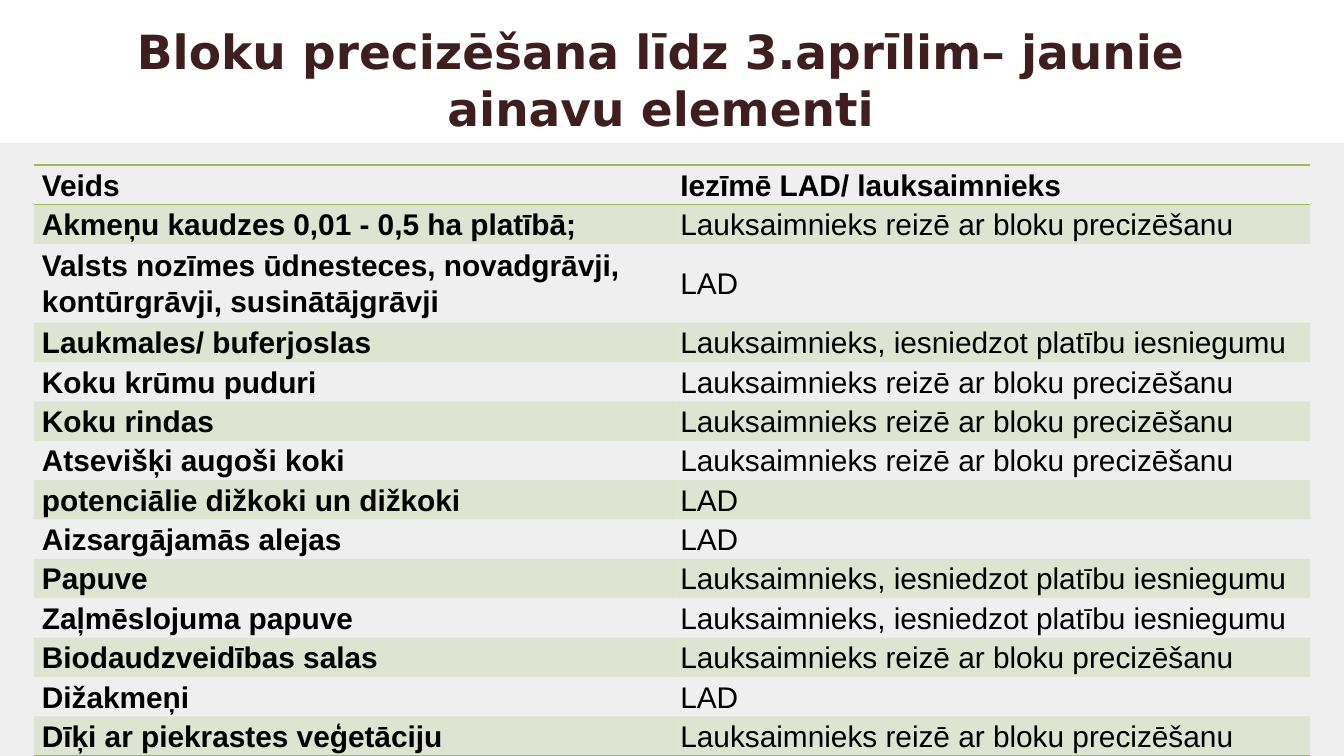
from lxml import etree
from pptx import Presentation
from pptx import util as u
from pptx.dml.color import RGBColor
from pptx.enum import shapes, text
from pptx.oxml.ns import qn

COLOURS = {"title": "3E1E1F", "panel": "A6A6A6", "green": "9BBB59", "ink": "000000"}
NO_GRID_STYLE = "{2D5ABB26-0587-4C30-8999-92F81FD0307C}"

# Who marks each element
FARMER_BLOCKS = "Lauksaimnieks reizē ar bloku precizēšanu"
FARMER_APPLICATION = "Lauksaimnieks, iesniedzot platību iesniegumu"
AGENCY = "LAD"
ELEMENTS = [
    ("Veids", "Iezīmē LAD/ lauksaimnieks"),
    ("Akmeņu kaudzes 0,01 - 0,5 ha platībā;", FARMER_BLOCKS),
    ("Valsts nozīmes ūdnesteces, novadgrāvji, kontūrgrāvji, susinātājgrāvji", AGENCY),
    ("Laukmales/ buferjoslas", FARMER_APPLICATION),
    ("Koku krūmu puduri", FARMER_BLOCKS),
    ("Koku rindas", FARMER_BLOCKS),
    ("Atsevišķi augoši koki", FARMER_BLOCKS),
    ("potenciālie dižkoki un dižkoki", AGENCY),
    ("Aizsargājamās alejas", AGENCY),
    ("Papuve", FARMER_APPLICATION),
    ("Zaļmēslojuma papuve", FARMER_APPLICATION),
    ("Biodaudzveidības salas", FARMER_BLOCKS),
    ("Dižakmeņi", AGENCY),
    ("Dīķi ar piekrastes veģetāciju", FARMER_BLOCKS),
]
TALL_ROW = 2
ROW_HEIGHT = 21.1


class PageBuilder:
    def __init__(self, page):
        self.page = page

    def colour(self, name):
        return RGBColor.from_string(COLOURS[name])

    def add_span(self, para, words, font, size, colour, bold):
        span = para.add_run()
        span.text = words
        span.font.name = font
        span.font.size = u.Pt(size)
        span.font.bold = bold
        span.font.color.rgb = self.colour(colour)

    def tint(self, fill, name, percent, owner):
        fill.solid()
        fill.fore_color.rgb = self.colour(name)
        tone = owner.find(qn("a:solidFill")).find(qn("a:srgbClr"))
        etree.SubElement(tone, qn("a:alpha"), val=str(percent * 1000))

    def title(self, words, left, top, width, height):
        box = self.page.shapes.title
        box.left, box.top = u.Pt(left), u.Pt(top)
        box.width, box.height = u.Pt(width), u.Pt(height)
        frame = box.text_frame
        frame.word_wrap = True
        frame.auto_size = text.MSO_AUTO_SIZE.NONE
        frame.vertical_anchor = text.MSO_ANCHOR.MIDDLE
        para = frame.paragraphs[0]
        para.alignment = text.PP_ALIGN.CENTER
        self.add_span(para, words, "DejaVu Sans", 25.2, "title", True)

    def panel(self, left, top, width, height):
        box = self.page.shapes.add_shape(
            shapes.MSO_SHAPE.RECTANGLE, u.Pt(left), u.Pt(top), u.Pt(width), u.Pt(height))
        box.shadow.inherit = False
        box.line.fill.background()
        self.tint(box.fill, "panel", 17, box.element.spPr)

    def border(self, cell, sides):
        # Lines must come before the fill in the cell properties
        for place, side in enumerate(sides):
            line = etree.Element(qn(f"a:{side}"), w=str(u.Pt(1)))
            solid = etree.SubElement(line, qn("a:solidFill"))
            etree.SubElement(solid, qn("a:srgbClr"), val=COLOURS["green"])
            cell._tc.get_or_add_tcPr().insert(place, line)

    def cell(self, cell, words, bold, banded):
        cell.margin_left = cell.margin_right = u.Pt(4.5)
        cell.margin_top = cell.margin_bottom = u.Pt(0)
        cell.vertical_anchor = text.MSO_ANCHOR.MIDDLE
        para = cell.text_frame.paragraphs[0]
        para.line_spacing = 1.07
        para.space_after = u.Pt(8)
        self.add_span(para, words, "Arial", 16, "ink", bold)
        if banded:
            self.tint(cell.fill, "green", 20, cell._tc.get_or_add_tcPr())
        else:
            cell.fill.background()

    def table(self, rows, left, top, width):
        height = ROW_HEIGHT * (len(rows) + 1)
        table = self.page.shapes.add_table(
            len(rows), 2, u.Pt(left), u.Pt(top), u.Pt(width), u.Pt(height)).table
        table._tbl.tblPr.find(qn("a:tableStyleId")).text = NO_GRID_STYLE
        table.horz_banding = False
        for column in table.columns:
            column.width = u.Pt(width / 2)
        for r, row in enumerate(rows):
            table.rows[r].height = u.Pt(ROW_HEIGHT * (2 if r == TALL_ROW else 1))
            for c, words in enumerate(row):
                cell = table.cell(r, c)
                self.cell(cell, words, bold=r == 0 or c == 0, banded=r % 2 == 1)
                if r == 0:
                    self.border(cell, ["lnT", "lnB"])
                elif r == len(rows) - 1:
                    self.border(cell, ["lnB"])


def main():
    deck = Presentation()
    deck.slide_width, deck.slide_height = u.Pt(720), u.Pt(405)
    builder = PageBuilder(deck.slides.add_slide(deck.slide_layouts[5]))

    # Heading
    builder.title("Bloku precizēšana līdz 3.aprīlim– jaunie ainavu elementi",
                  30, 8.5, 648, 68)
    # Grey panel behind the table
    builder.panel(0, 76.5, 720, 328.5)
    # Landscape elements
    builder.table(ELEMENTS, 18, 88.5, 684)

    deck.save("out.pptx")


if __name__ == "__main__":
    main()
